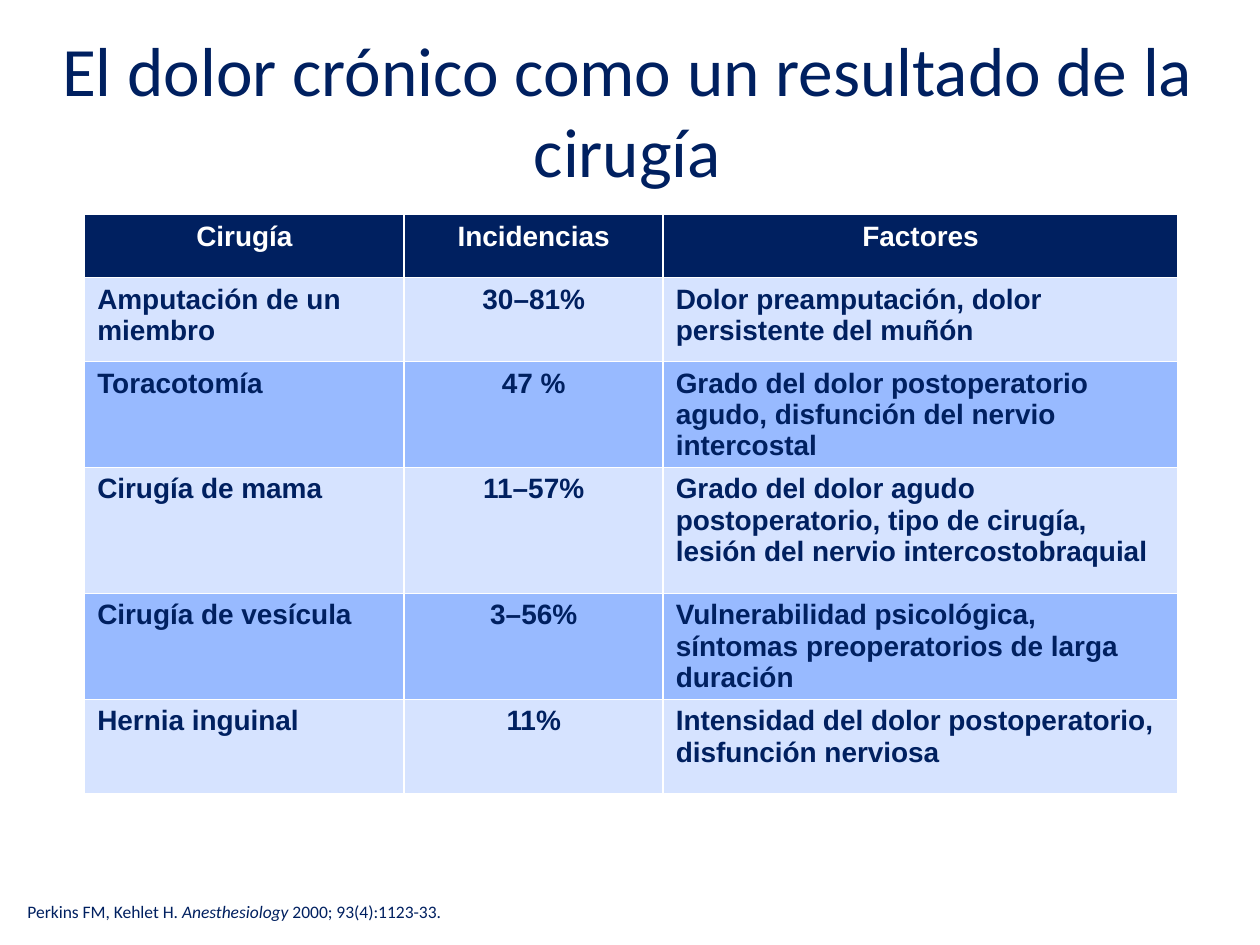
from dataclasses import dataclass

from lxml import etree
from pptx import Presentation
from pptx.dml.color import RGBColor
from pptx.enum import text
from pptx.oxml import ns
from pptx.util import Pt


@dataclass(frozen=True)
class Theme:
    navy: str = "002060"
    white: str = "FFFFFF"
    bands: tuple = ("D6E3FF", "98BAFF")
    heading_font: str = "Calibri"
    table_font: str = "Arial"
    title_size: float = 39.6
    table_size: float = 16
    citation_size: float = 10


THEME = Theme()
CENTER = text.PP_ALIGN.CENTER
LEFT = text.PP_ALIGN.LEFT

TITLE = "El dolor crónico como un resultado de la cirugía"
HEADER = ("Cirugía", "Incidencias", "Factores")
SURGERIES = (
    ("Amputación de un miembro", "30–81%",
     "Dolor preamputación, dolor persistente del muñón"),
    ("Toracotomía", "47 %",
     "Grado del dolor postoperatorio agudo, disfunción del nervio intercostal"),
    ("Cirugía de mama", "11–57%",
     "Grado del dolor agudo postoperatorio, tipo de cirugía, "
     "lesión del nervio intercostobraquial"),
    ("Cirugía de vesícula", "3–56%",
     "Vulnerabilidad psicológica, síntomas preoperatorios de larga duración"),
    ("Hernia inguinal", "11%",
     "Intensidad del dolor postoperatorio, disfunción nerviosa"),
)
COLUMN_WIDTHS = (182.6, 148, 294.2)
ROW_HEIGHTS = (36, 48, 54, 72, 51, 54)


def write(paragraph, content, *, font, size, color=THEME.navy, bold=False,
          italic=False, align=LEFT):
    """Append one formatted run to the paragraph."""
    paragraph.alignment = align
    run = paragraph.add_run()
    run.text = content
    run.font.name = font
    run.font.size = Pt(size)
    run.font.bold = bold
    run.font.italic = italic
    run.font.color.rgb = RGBColor.from_string(color)


def place(shape, left, top, width, height):
    shape.left, shape.top = Pt(left), Pt(top)
    shape.width, shape.height = Pt(width), Pt(height)


def add_title(slide):
    title = slide.shapes.title
    place(title, 2.9, 20.9, 711.4, 87.1)
    frame = title.text_frame
    frame.auto_size = text.MSO_AUTO_SIZE.NONE
    frame.vertical_anchor = text.MSO_ANCHOR.MIDDLE
    paragraph = frame.paragraphs[0]
    paragraph.line_spacing = 0.97
    write(paragraph, TITLE, font=THEME.heading_font, size=THEME.title_size,
          align=CENTER)


def set_borders(cell, color, width):
    properties = cell._tc.get_or_add_tcPr()
    for side in ("a:lnL", "a:lnR", "a:lnT", "a:lnB"):
        line = etree.SubElement(properties, ns.qn(side), w=str(Pt(width)))
        fill = etree.SubElement(line, ns.qn("a:solidFill"))
        etree.SubElement(fill, ns.qn("a:srgbClr"), val=color)


def fill_cell(cell, content, *, fill, color, align):
    set_borders(cell, THEME.white, 1)
    cell.fill.solid()
    cell.fill.fore_color.rgb = RGBColor.from_string(fill)
    write(cell.text_frame.paragraphs[0], content, font=THEME.table_font,
          size=THEME.table_size, color=color, bold=True, align=align)


def add_surgery_table(slide):
    rows = (HEADER, *SURGERIES)
    table = slide.shapes.add_table(
        len(rows), len(HEADER), Pt(48.4), Pt(122.6),
        Pt(sum(COLUMN_WIDTHS)), Pt(sum(ROW_HEIGHTS))).table
    for column, width in zip(table.columns, COLUMN_WIDTHS):
        column.width = Pt(width)
    for row, height in zip(table.rows, ROW_HEIGHTS):
        row.height = Pt(height)
    for i, contents in enumerate(rows):
        is_header = i == 0
        for j, content in enumerate(contents):
            fill_cell(
                table.cell(i, j), content,
                fill=THEME.navy if is_header else THEME.bands[(i - 1) % 2],
                color=THEME.white if is_header else THEME.navy,
                align=CENTER if is_header or j == 1 else LEFT)


def add_citation(slide):
    box = slide.shapes.add_textbox(Pt(8.6), Pt(501.8), Pt(313.2), Pt(38.2))
    frame = box.text_frame
    frame.word_wrap = True
    frame.vertical_anchor = text.MSO_ANCHOR.MIDDLE
    for content, italic in (("Perkins FM, Kehlet H. ", False),
                            ("Anesthesiology ", True),
                            ("2000; 93(4):1123-33.", False)):
        write(frame.paragraphs[0], content, font=THEME.heading_font,
              size=THEME.citation_size, italic=italic)


def main():
    presentation = Presentation()
    presentation.slide_width, presentation.slide_height = Pt(720), Pt(540)
    title_only = presentation.slide_layouts[5]
    slide = presentation.slides.add_slide(title_only)
    add_title(slide)
    add_surgery_table(slide)
    add_citation(slide)
    presentation.save("out.pptx")


if __name__ == "__main__":
    main()
